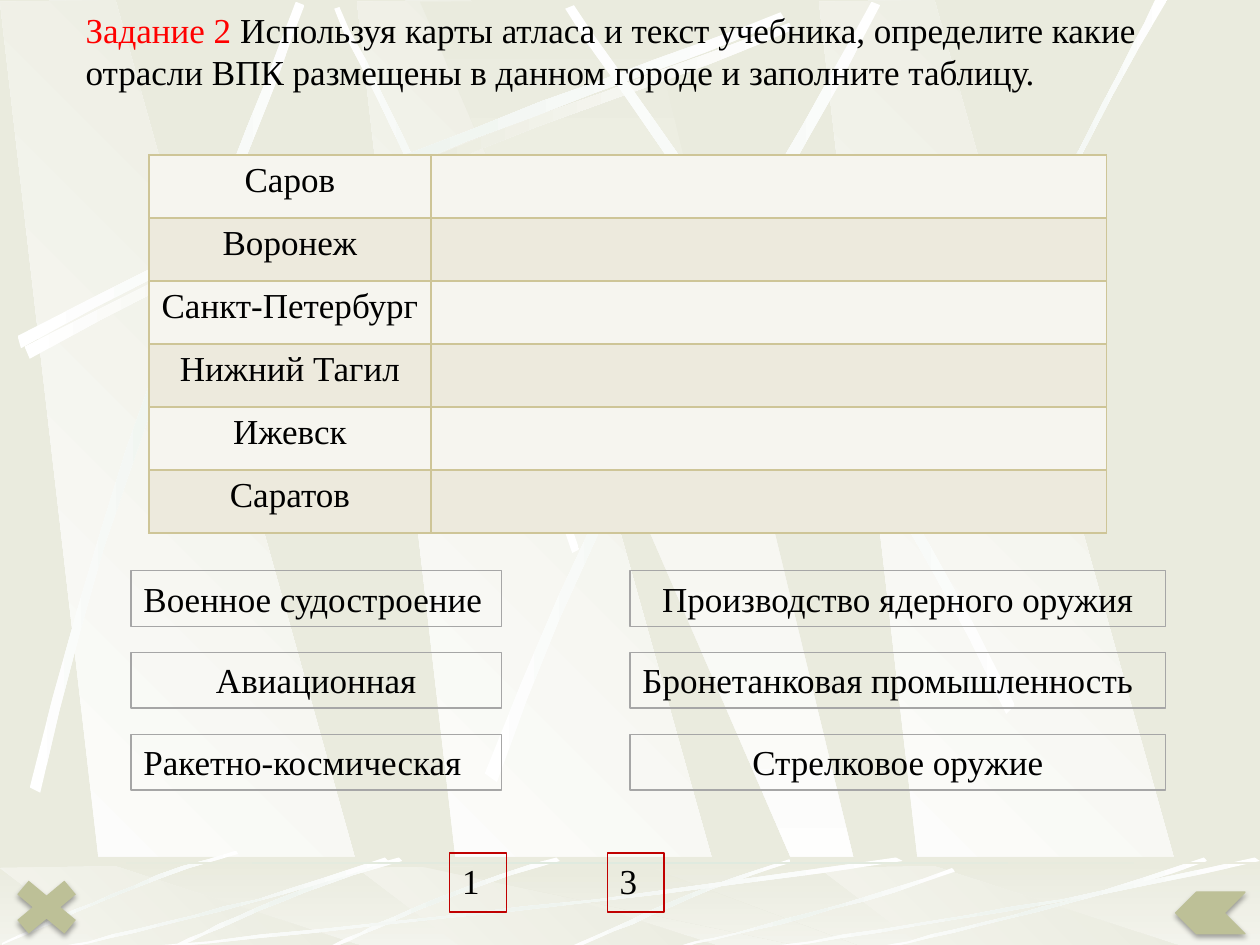
from copy import deepcopy

from lxml import etree
from pptx import Presentation
from pptx.dml.color import RGBColor
from pptx.enum import shapes, text
from pptx.oxml import ns
from pptx.util import Pt

FONT = "Times New Roman"
PAPER, WHITE, MINT, OLIVE = "EAEBDE", "FFFFFF", "EFF4EF", "BDC097"
BORDER, BANDS = "CEC597", ("F6F5EF", "EDEADD")
GLOW = (WHITE, MINT, WHITE)

TASK = [
    ("Задание 2 ", "FF0000"),
    ("Используя карты атласа и текст учебника, определите какие отрасли ВПК "
     "размещены в данном городе и заполните таблицу.", "000000"),
]
CITIES = ["Саров", "Воронеж", "Санкт-Петербург", "Нижний Тагил", "Ижевск", "Саратов"]
OPTION_COLUMNS = [
    (74.9, 211.7, [("Военное судостроение", "LEFT"), ("Авиационная", "CENTER"),
                   ("Ракетно-космическая", "LEFT")]),
    (360, 306, [("Производство ядерного оружия", "CENTER"),
                ("Бронетанковая промышленность", "LEFT"), ("Стрелковое оружие", "CENTER")]),
]
NUMBERS = [("1", 257), ("3", 347)]

BEAM = [(61.9, 540), (217.4, 541.4), (65.5, 0), (0, 1.4)]
BEAM_LEFTS = (203.8, 0, 468)
CROSS_BEAM = [(239.8, 0.7), (473.8, 540.7), (499.7, 540.7), (369.4, 0)]
RIDGE = [(14.4, 198), (204.5, 96.5), (377.3, 42.5), (450.7, 13),
         (452.9, 17.3), (380.2, 49.7), (182.9, 108.7), (16.6, 205.2)]
WALL_STREAKS = [
    [(16.6, 450), (67, 240.5), (141.8, 75.6), (169.2, 1.4),
     (173.5, 2.9), (149, 78.5), (61.9, 265), (23, 452.9)],
    [(277.2, 442.1), (358.6, 230.4), (459.4, 73.4), (498.2, 0.7),
     (502.6, 2.9), (467.3, 77.8), (349.9, 255.6), (283.7, 447.1)],
    [(580.3, 403.2), (482.4, 211), (371.5, 68.4), (327.6, 2.9),
     (323.3, 5), (365, 72.7), (493.2, 234), (575.3, 408.2)],
    [(531.4, 283.7), (586.1, 124.6), (639.4, 47.5), (660.2, 0),
     (667.4, 0), (601.9, 104.4), (553.7, 231.8), (535.7, 285.8)],
]
LEFT_STREAK = [(331.2, 313.9), (281.5, 168.5), (217.4, 55.4), (193.7, 3.6),
               (190.8, 5), (212.4, 56.9), (286.6, 185.8), (326.9, 316.1)]
FLOOR_STREAK = [(451.4, 491), (386.6, 510.5), (343.4, 534.2), (322.6, 542.9),
                (326.2, 543.6), (352.8, 531.4), (411.1, 504), (452.2, 493.2)]
TILE_STREAK = [(318.2, 489.6), (255.6, 507.6), (206.6, 532.8), (184.3, 542.2),
               (185, 543.6), (207.4, 535), (262.8, 506.2), (319.7, 491.8)]
TILE_SHIFTS = [(0, 0), (-90, 0), (-183.6, -3.6)]
SWEEP = [(1, 0.04), (0.57, 0.57), (0.17, 0.85), (0.01, 1),
         (0, 0.99), (0.17, 0.81), (0.62, 0.51), (0.99, 0)]
SWEEP_FRAMES = [(72, 489.6, 444.2), (30.2, 489.6, 192), (379.4, 496.1, 166.3),
                (498.2, 489.6, 192), (432, 489.6, 288)]
FLOOR_TOP, FLOOR_BOTTOM, TILE_TOP = 489.6, 543.6, 495.4


def rgb(value):
    return RGBColor.from_string(value)


def element(parent, tag, **attributes):
    return etree.SubElement(parent, ns.qn(tag), attributes)


def paint(shape, colours=(), angle=0, line=None):
    shape.shadow.inherit = False
    if len(colours) > 1:
        shape.fill.gradient()
        shape.fill.gradient_angle = (360 - angle) % 360
        stops = shape._element.spPr.find(ns.qn("a:gradFill")).find(ns.qn("a:gsLst"))
        if len(colours) == 3:
            stops.insert(1, deepcopy(stops[0]))
        for index, (stop, colour) in enumerate(zip(shape.fill.gradient_stops, colours)):
            stop.color.rgb = rgb(colour)
            stop.position = index / (len(colours) - 1)
    elif colours:
        shape.fill.solid()
        shape.fill.fore_color.rgb = rgb(colours[0])
    else:
        shape.fill.background()
    if line:
        shape.line.color.rgb = rgb(line)
        shape.line.width = Pt(0.75)
    else:
        shape.line.fill.background()


def preset(page, kind, left, top, width, height, **look):
    shape = page.shapes.add_shape(kind, Pt(left), Pt(top), Pt(width), Pt(height))
    paint(shape, **look)
    return shape


def polygon(page, points, colours, angle=0):
    builder = page.shapes.build_freeform(*points[0], scale=Pt(1))
    builder.add_line_segments(points[1:], close=True)
    paint(builder.convert_to_shape(), colours, angle)


def curve(controls, steps=12):
    points = []
    for step in range(steps + 1):
        t = step / steps
        weights = ((1 - t) ** 3, 3 * t * (1 - t) ** 2, 3 * t * t * (1 - t), t ** 3)
        points.append(tuple(sum(w * c[axis] for w, c in zip(weights, controls))
                            for axis in (0, 1)))
    return points


def streak(page, controls, colours=GLOW):
    polygon(page, curve(controls[:4]) + curve(controls[4:]), colours)


def move(points, dx=0, dy=0, sx=1, sy=1):
    return [(dx + x * sx, dy + y * sy) for x, y in points]


def beams(page, top, scale):
    for left in BEAM_LEFTS:
        polygon(page, move(BEAM, left, top, sy=scale), (WHITE, PAPER), 315)
    polygon(page, move(CROSS_BEAM, 0, top, sy=scale), (PAPER, WHITE), 90)


def write(frame, spans, align="LEFT", wrap=True, anchor="TOP"):
    frame.word_wrap = wrap
    frame.vertical_anchor = text.MSO_ANCHOR[anchor]
    para = frame.paragraphs[0]
    para.alignment = text.PP_ALIGN[align]
    for content, colour in spans:
        span = para.add_run()
        span.text = content
        span.font.name, span.font.size = FONT, Pt(20)
        span.font.color.rgb = rgb(colour)


def drop_shadow(shape):
    effects = shape._element.spPr.find(ns.qn("a:effectLst"))
    shadow = element(effects, "a:outerShdw", blurRad=str(Pt(3.1)), dist=str(Pt(1.8)),
                     dir="5400000", rotWithShape="0")
    element(element(shadow, "a:srgbClr", val="000000"), "a:alpha", val="35000")


def draw_background(page):
    rect = shapes.MSO_SHAPE.RECTANGLE
    floor = (0, FLOOR_TOP, 720, FLOOR_BOTTOM - FLOOR_TOP)
    page.background.fill.solid()
    page.background.fill.fore_color.rgb = rgb(PAPER)
    beams(page, 0, 1)
    streak(page, RIDGE, (WHITE, PAPER, WHITE))
    for controls in [LEFT_STREAK, move(RIDGE, -4.3, -5.8)] + WALL_STREAKS:
        streak(page, controls)
    preset(page, rect, *floor, colours=(PAPER, WHITE), angle=90)
    beams(page, TILE_TOP, (FLOOR_BOTTOM - TILE_TOP) / 541.4)
    veil = preset(page, rect, *floor, colours=(PAPER,))
    element(next(veil._element.spPr.iter(ns.qn("a:srgbClr"))), "a:alpha", val="50000")
    streak(page, FLOOR_STREAK)
    for shift in TILE_SHIFTS:
        streak(page, move(TILE_STREAK, *shift))
    for left, top, width in SWEEP_FRAMES:
        streak(page, move(SWEEP, left, top, width, FLOOR_BOTTOM - top))
    preset(page, rect, 0, 492.5, 720, 1.4, colours=(PAPER, "DFEADF", PAPER))


def draw_table(page):
    frame = page.shapes.add_table(len(CITIES), 2, Pt(85), Pt(88.6), Pt(547.2), Pt(216))
    table = frame.table
    table.columns[0].width, table.columns[1].width = Pt(161.3), Pt(385.9)
    for index, city in enumerate(CITIES):
        write(table.cell(index, 0).text_frame, [(city, "000000")], "CENTER")
        for cell in table.rows[index].cells:
            properties = cell._tc.get_or_add_tcPr()
            for side in ("a:lnL", "a:lnR", "a:lnT", "a:lnB"):
                fill = element(element(properties, side, w=str(Pt(1))), "a:solidFill")
                element(fill, "a:srgbClr", val=BORDER)
            cell.fill.solid()
            cell.fill.fore_color.rgb = rgb(BANDS[index % 2])


def main():
    deck = Presentation()
    deck.slide_width, deck.slide_height = Pt(720), Pt(540)
    page = deck.slides.add_slide(deck.slide_layouts[6])
    kinds = shapes.MSO_SHAPE
    draw_background(page)
    drop_shadow(preset(page, kinds.MATH_MULTIPLY, 0.7, 496.8, 51.8, 43.2, colours=(OLIVE,)))
    for number, left in NUMBERS:
        box = preset(page, kinds.RECTANGLE, left, 487.4, 32.4, 33.8, line="C00000")
        write(box.text_frame, [(number, "000000")], wrap=False)
    title = page.shapes.add_textbox(Pt(41.8), Pt(1.4), Pt(624.2), Pt(55.4))
    write(title.text_frame, TASK)
    draw_table(page)
    for left, width, options in OPTION_COLUMNS:
        for index, (label, align) in enumerate(options):
            box = preset(page, kinds.RECTANGLE, left, 326.2 + 46.8 * index, width, 31.7,
                         line="A6A6A6")
            write(box.text_frame, [(label, "000000")], align)
    arrow = preset(page, kinds.CHEVRON, 671.8, 509.8, 39.6, 23.8, colours=(OLIVE,), line=OLIVE)
    arrow.rotation = 180
    drop_shadow(arrow)
    deck.save("out.pptx")


if __name__ == "__main__":
    main()
